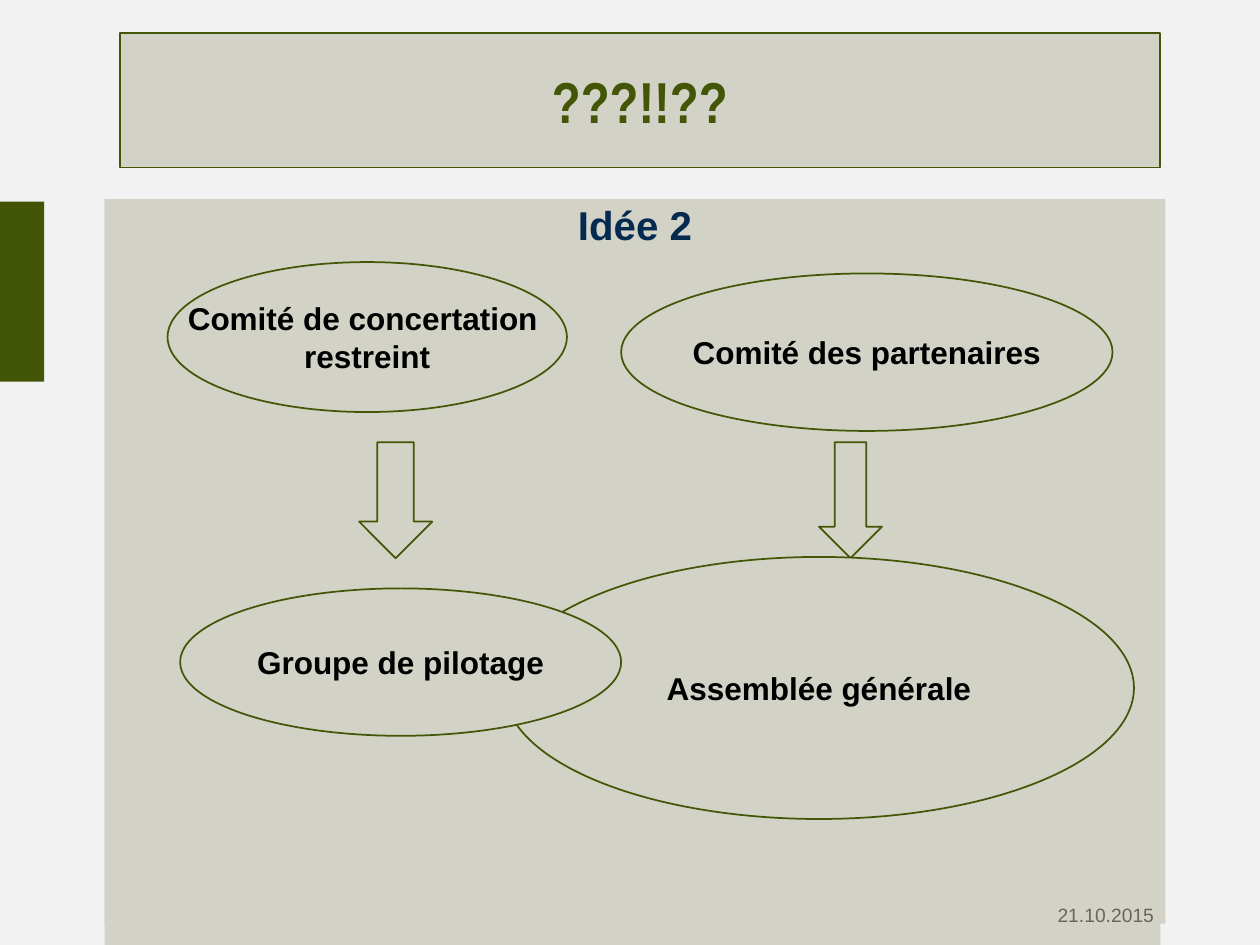
import pptx
import pptx.util
from pptx.dml.color import RGBColor
from pptx.enum.shapes import MSO_SHAPE
from pptx.enum.text import MSO_ANCHOR, PP_ALIGN
from pptx.util import Inches, Pt

PAPER = RGBColor(0xF2, 0xF2, 0xF2)
SAGE = RGBColor(0xD2, 0xD2, 0xC6)
OLIVE = RGBColor(0x43, 0x56, 0x07)
NAVY = RGBColor(0x05, 0x2A, 0x4F)
GREY = RGBColor(0x6B, 0x64, 0x5E)
BLACK = RGBColor(0, 0, 0)

# left, top, width, height, fill
PANELS = [
    (0.83, 1.6, 8.38, 5.9, SAGE),
    (0, 1.6, 0.35, 1.43, OLIVE),
]
HEADING = ("Idée 2", (0.83, 1.58, 8.42, 5.75))
DATE = ("21.10.2015", (8.08, 7.17, 1.08, 0.26))
TITLE = ("???!!??", (0.95, 0.26, 8.26, 1.07))

# Back to front: the general assembly covers an arrow tip, the steering group covers the assembly
UPPER_BODIES = [
    (["Comité de concertation ", "restreint"], (1.33, 2.08, 3.17, 1.19)),
    (["Comité des partenaires"], (4.93, 2.17, 3.9, 1.25)),
]
ARROWS = [(2.85, 0.58), (6.5, 0.5)]  # left, width
ARROW_TOP, ARROW_HEIGHT = 3.51, 0.92
LOWER_BODIES = [
    (["Assemblée générale"], (4, 4.42, 5, 2.08)),
    (["Groupe de pilotage"], (1.43, 4.67, 3.5, 1.17)),
]


def add_shape(s, kind, box, fill=SAGE, line=None):
    sp = s.shapes.add_shape(kind, *map(Inches, box))
    sp.shadow.inherit = False
    sp.fill.solid()
    sp.fill.fore_color.rgb = fill
    if line is None:
        sp.line.fill.background()
    else:
        sp.line.color.rgb = line
        sp.line.width = Pt(1)
    return sp


def write(sp, lines, size, color, font="Arial", bold=True, align=PP_ALIGN.CENTER,
          anchor=MSO_ANCHOR.MIDDLE, wrap=False, inset=True):
    tf = sp.text_frame
    tf.word_wrap = wrap
    tf.vertical_anchor = anchor
    if not inset:
        tf.margin_left = tf.margin_top = tf.margin_right = tf.margin_bottom = 0
    tf.text = "\n".join(lines)
    for p in tf.paragraphs:
        p.alignment = align
        p.font.name = font
        p.font.size = Pt(size)
        p.font.bold = bold
        p.font.color.rgb = color
    return tf


def add_bodies(s, bodies):
    for lines, box in bodies:
        write(add_shape(s, MSO_SHAPE.OVAL, box, line=OLIVE), lines, 18, BLACK)


def main():
    prs = pptx.Presentation()
    prs.slide_width, prs.slide_height = Inches(10), Inches(7.5)
    s = prs.slides.add_slide(prs.slide_layouts[6])
    s.background.fill.solid()
    s.background.fill.fore_color.rgb = PAPER

    for *box, fill in PANELS:
        add_shape(s, MSO_SHAPE.RECTANGLE, box, fill)

    text, box = HEADING
    tf = write(add_shape(s, MSO_SHAPE.RECTANGLE, box), [text], 23, NAVY,
               anchor=MSO_ANCHOR.TOP, wrap=True, inset=False)
    tf.paragraphs[0].line_spacing = Pt(28)

    text, box = DATE
    write(s.shapes.add_textbox(*map(Inches, box)), [text], 11, GREY, bold=False,
          align=PP_ALIGN.RIGHT, anchor=MSO_ANCHOR.TOP, wrap=True, inset=False)

    add_bodies(s, UPPER_BODIES)
    for left, width in ARROWS:
        add_shape(s, MSO_SHAPE.DOWN_ARROW, (left, ARROW_TOP, width, ARROW_HEIGHT), line=OLIVE)
    add_bodies(s, LOWER_BODIES)

    text, box = TITLE
    write(add_shape(s, MSO_SHAPE.RECTANGLE, box, line=OLIVE), [text], 33, OLIVE, "Arial Narrow")

    prs.save("out.pptx")


if __name__ == "__main__":
    main()
